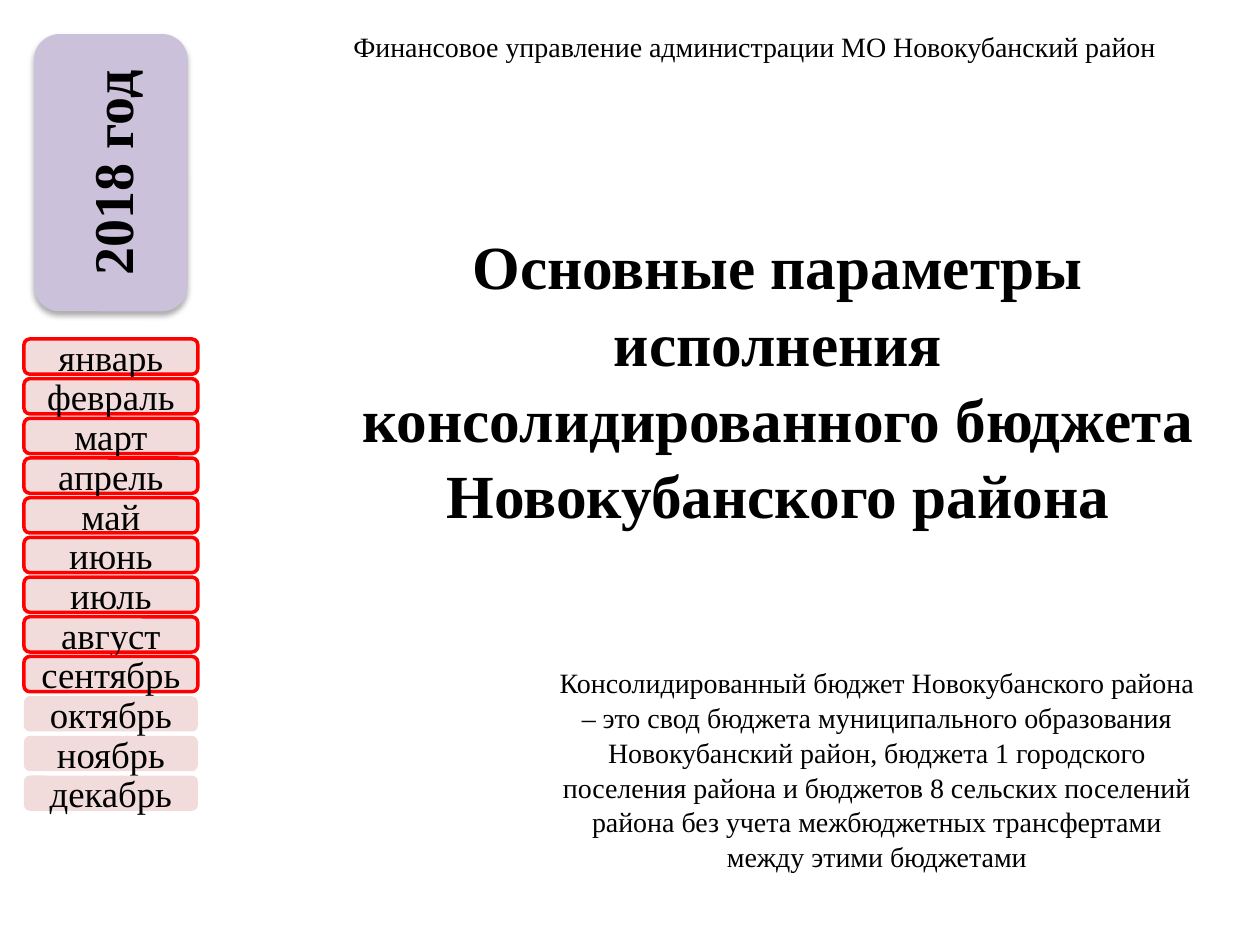
from dataclasses import dataclass

from lxml import etree
from pptx import Presentation
from pptx.dml.color import RGBColor
from pptx.enum.shapes import MSO_SHAPE
from pptx.enum.text import MSO_ANCHOR, MSO_AUTO_SIZE, PP_ALIGN
from pptx.oxml import parse_xml
from pptx.oxml.ns import nsdecls
from pptx.util import Inches, Pt


@dataclass(frozen=True)
class Theme:
    font: str = "Times New Roman"
    ink: RGBColor = RGBColor(0, 0, 0)
    year_fill: RGBColor = RGBColor(0xCC, 0xC1, 0xDA)
    month_fill: RGBColor = RGBColor(0xF2, 0xDC, 0xDB)
    reported_line: RGBColor = RGBColor(0xFF, 0, 0)
    body_size: int = 16
    month_size: int = 21
    year_size: int = 32
    heading_size: int = 35


THEME = Theme()
MONTHS = ["январь", "февраль", "март", "апрель", "май", "июнь", "июль",
          "август", "сентябрь", "октябрь", "ноябрь", "декабрь"]
REPORTED_MONTHS = 9
MONTH_TOP, MONTH_PITCH = 2.69, 0.315

AGENCY = "Финансовое управление администрации МО Новокубанский район"
HEADING = ("Основные параметры исполнения консолидированного бюджета "
           "Новокубанского района")
DEFINITION = (
    "Консолидированный бюджет Новокубанского района – это свод бюджета "
    "муниципального образования Новокубанский район, бюджета 1 городского "
    "поселения района и бюджетов 8 сельских поселений района без учета "
    "межбюджетных трансфертами между этими бюджетами")


def write(frame, text, size, bold=False, spacing=None):
    frame.word_wrap = True
    paragraph = frame.paragraphs[0]
    paragraph.alignment = PP_ALIGN.CENTER
    if spacing:
        paragraph.line_spacing = spacing
    run = paragraph.add_run()
    run.text = text
    run.font.name = THEME.font
    run.font.size = Pt(size)
    run.font.bold = bold
    run.font.color.rgb = THEME.ink


def add_agency_title(slide):
    title = slide.shapes.title
    title.left, title.top = Inches(2.56), Inches(0.36)
    title.width, title.height = Inches(6.92), Inches(0.27)
    frame = title.text_frame
    frame.auto_size = MSO_AUTO_SIZE.NONE
    frame.vertical_anchor = MSO_ANCHOR.MIDDLE
    # The line sits in the upper part of its box
    frame.margin_top, frame.margin_bottom = 0, Inches(0.25)
    frame.margin_right = Inches(0.16)
    write(frame, AGENCY, THEME.body_size)


def add_text(slide, box, text, size, bold=False):
    frame = slide.shapes.add_textbox(*map(Inches, box)).text_frame
    frame.auto_size = MSO_AUTO_SIZE.SHAPE_TO_FIT_TEXT
    write(frame, text, size, bold, spacing=1.04)


def add_badge(slide, box, fill, text, size, bold=False):
    badge = slide.shapes.add_shape(MSO_SHAPE.ROUNDED_RECTANGLE,
                                   *map(Inches, box))
    badge.shadow.inherit = False
    badge.fill.solid()
    badge.fill.fore_color.rgb = fill
    badge.line.fill.background()
    frame = badge.text_frame
    frame.vertical_anchor = MSO_ANCHOR.MIDDLE
    frame.margin_left = frame.margin_right = 0
    write(frame, text, size, bold)
    return badge


def add_drop_shadow(badge):
    effects = badge.element.spPr.find(
        "{http://schemas.openxmlformats.org/drawingml/2006/main}effectLst")
    effects.append(parse_xml(
        f'<a:outerShdw {nsdecls("a")} blurRad="{Pt(3.5)}" dist="{Pt(2.2)}" '
        'dir="5400000" rotWithShape="0"><a:srgbClr val="000000">'
        '<a:alpha val="32000"/></a:srgbClr></a:outerShdw>'))


def add_year(slide):
    year = add_badge(slide, (-0.22, 0.76, 2.2, 1.22), THEME.year_fill,
                     "2018 год", THEME.year_size, bold=True)
    year.rotation = 270
    add_drop_shadow(year)


def add_months(slide):
    """Stack the months, outlining those already reported."""
    for index, name in enumerate(MONTHS):
        box = (0.19, MONTH_TOP + index * MONTH_PITCH, 1.38, 0.28)
        month = add_badge(slide, box, THEME.month_fill, name,
                          THEME.month_size)
        if index < REPORTED_MONTHS:
            month.line.color.rgb = THEME.reported_line
            month.line.width = Pt(2)


def main():
    deck = Presentation()
    deck.slide_width, deck.slide_height = Inches(10), Inches(7.5)
    slide = deck.slides.add_slide(deck.slide_layouts[5])
    add_agency_title(slide)
    add_year(slide)
    add_text(slide, (4.28, 5.22, 5.36, 1.72), DEFINITION, THEME.body_size)
    add_text(slide, (2.7, 1.74, 6.95, 2.46), HEADING, THEME.heading_size,
             bold=True)
    add_months(slide)
    deck.save("out.pptx")


if __name__ == "__main__":
    main()
